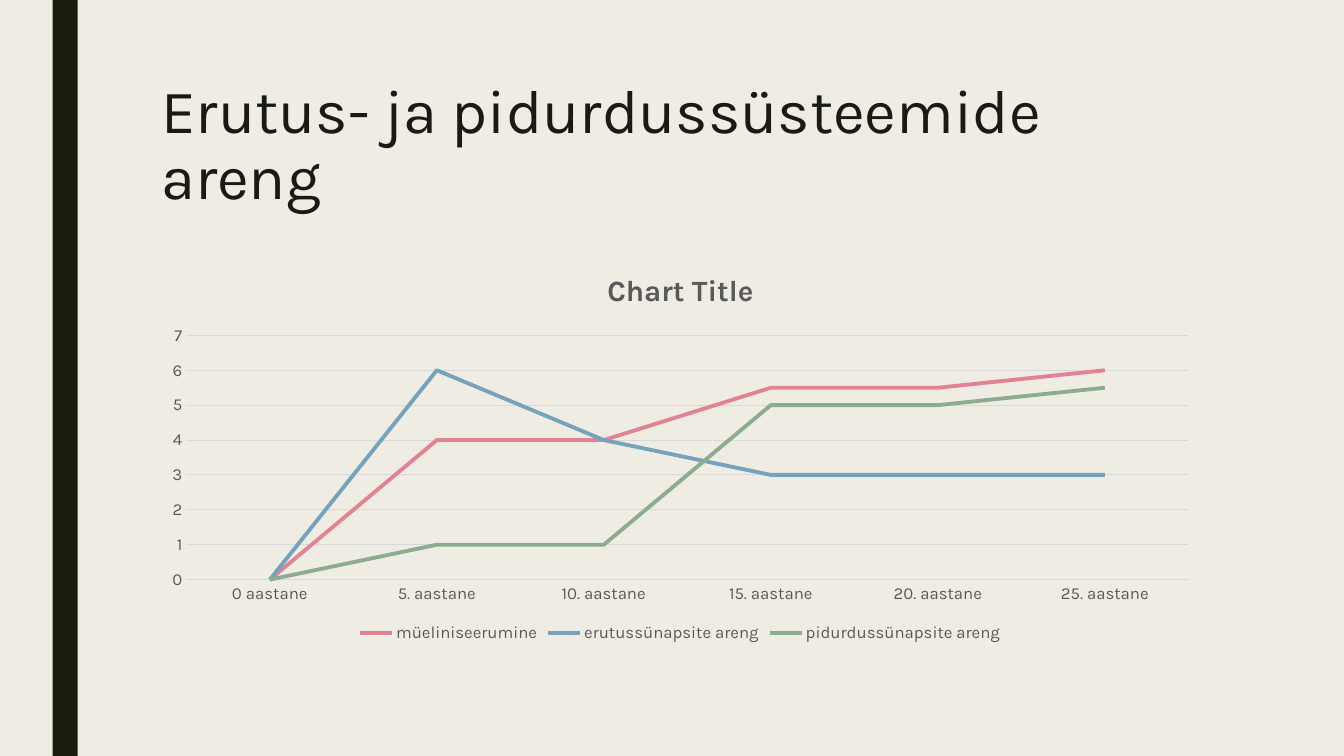
import pptx
import pptx.util
import pptx.chart.data
import pptx.dml.color
import pptx.enum.chart
import pptx.enum.shapes
import pptx.enum.text
from dataclasses import dataclass

Pt = pptx.util.Pt
RGB = pptx.dml.color.RGBColor.from_string


@dataclass(frozen=True)
class Theme:
    font: str = "Karla"
    background: str = "EFEDE3"
    ink: str = "191B0E"
    label: str = "595959"
    grid: str = "D9D9D9"
    series: tuple = ("E28394", "77A2BB", "8DAB8E")
    title_size: int = 44
    chart_title_size: int = 21
    label_size: int = 12
    series_width: float = 2.75


THEME = Theme()
SLIDE_WIDTH, SLIDE_HEIGHT = 960, 540
STRIPE_BOX = (37.5, 0, 18, SLIDE_HEIGHT)
HEADING_BOX = (108, 54, 756, 116.64)
DEVELOPMENT_BOX = (108, 180, 756, 282)

AGES = ["0 aastane"] + [f"{age}. aastane" for age in range(5, 26, 5)]
DEVELOPMENT = {
    "müeliniseerumine": (0, 4, 4, 5.5, 5.5, 6),
    "erutussünapsite areng": (0, 6, 4, 3, 3, 3),
    "pidurdussünapsite areng": (0, 1, 1, 5, 5, 5.5),
}


def apply(target, values):
    for name, value in values.items():
        setattr(target, name, value)


def style_font(font, size, color, bold=False):
    apply(font, {"name": THEME.font, "size": Pt(size), "bold": bold})
    font.color.rgb = RGB(color)


def style_line(line, color, width):
    line.color.rgb = RGB(color)
    line.width = Pt(width)


def add_stripe(slide, box):
    stripe = slide.shapes.add_shape(
        pptx.enum.shapes.MSO_SHAPE.RECTANGLE, *map(Pt, box))
    stripe.shadow.inherit = False
    stripe.fill.solid()
    stripe.fill.fore_color.rgb = RGB(THEME.ink)
    stripe.line.fill.background()


def add_heading(slide, box, text):
    heading = slide.shapes.title
    apply(heading, dict(zip(("left", "top", "width", "height"), map(Pt, box))))
    frame = heading.text_frame
    frame.text = text
    apply(frame, {
        "word_wrap": True,
        "auto_size": pptx.enum.text.MSO_AUTO_SIZE.NONE,
        "vertical_anchor": pptx.enum.text.MSO_ANCHOR.TOP,
    })
    line = frame.paragraphs[0]
    apply(line, {"alignment": pptx.enum.text.PP_ALIGN.LEFT, "line_spacing": 0.89})
    style_font(line.runs[0].font, THEME.title_size, THEME.ink)


def add_development_chart(slide, box):
    data = pptx.chart.data.CategoryChartData()
    data.categories = AGES
    for process, levels in DEVELOPMENT.items():
        data.add_series(process, levels)
    chart = slide.shapes.add_chart(
        pptx.enum.chart.XL_CHART_TYPE.LINE, *map(Pt, box), data).chart
    style_font(chart.font, THEME.label_size, THEME.label)

    chart.has_title = True
    caption = chart.chart_title.text_frame
    caption.text = "Chart Title"
    style_font(caption.paragraphs[0].runs[0].font,
               THEME.chart_title_size, THEME.label, bold=True)

    chart.has_legend = True
    apply(chart.legend, {
        "position": pptx.enum.chart.XL_LEGEND_POSITION.BOTTOM,
        "include_in_layout": False,
    })
    style_font(chart.legend.font, THEME.label_size, THEME.label)

    ages, levels = chart.category_axis, chart.value_axis
    for axis in (ages, levels):
        apply(axis, {
            "major_tick_mark": pptx.enum.chart.XL_TICK_MARK.NONE,
            "minor_tick_mark": pptx.enum.chart.XL_TICK_MARK.NONE,
        })
        style_font(axis.tick_labels.font, THEME.label_size, THEME.label)
    style_line(ages.format.line, THEME.grid, 1)
    apply(levels, {"minimum_scale": 0, "maximum_scale": 7, "major_unit": 1,
                   "has_major_gridlines": True})
    levels.format.line.fill.background()
    style_line(levels.major_gridlines.format.line, THEME.grid, 0.75)

    plot = chart.plots[0]
    plot.vary_by_categories = False
    for process, color in zip(plot.series, THEME.series):
        process.smooth = False
        process.marker.style = pptx.enum.chart.XL_MARKER_STYLE.NONE
        style_line(process.format.line, color, THEME.series_width)


def build_slide(deck):
    slide = deck.slides.add_slide(deck.slide_layouts.get_by_name("Title Only"))
    slide.background.fill.solid()
    slide.background.fill.fore_color.rgb = RGB(THEME.background)
    add_stripe(slide, STRIPE_BOX)
    add_heading(slide, HEADING_BOX, "Erutus- ja pidurdussüsteemide areng")
    add_development_chart(slide, DEVELOPMENT_BOX)


def main():
    deck = pptx.Presentation()
    apply(deck, {"slide_width": Pt(SLIDE_WIDTH), "slide_height": Pt(SLIDE_HEIGHT)})
    build_slide(deck)
    deck.save("out.pptx")


if __name__ == "__main__":
    main()
